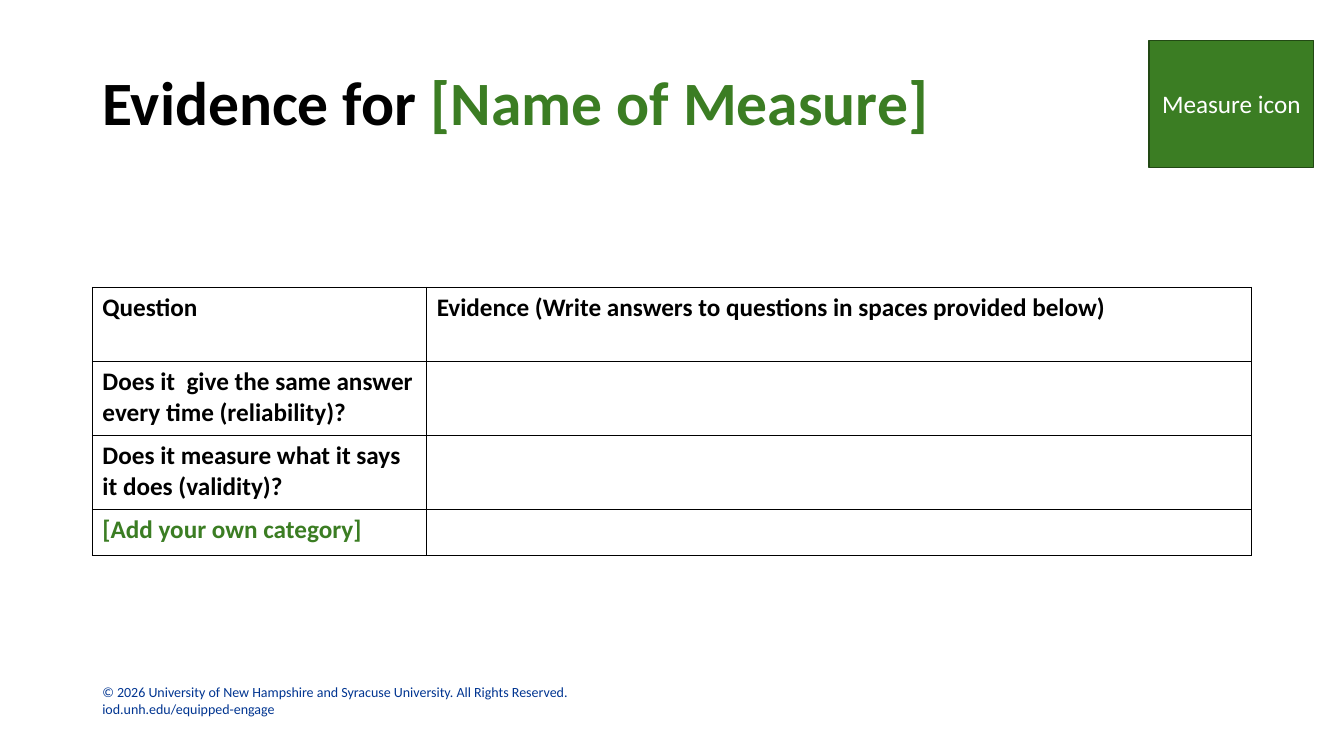
from dataclasses import dataclass

from lxml import etree
from pptx import Presentation
from pptx import util as u
from pptx.dml.color import RGBColor
from pptx.enum import shapes, text
from pptx.oxml import ns


@dataclass(frozen=True)
class Theme:
    font: str = "Calibri"
    ink: str = "000000"
    green: str = "3B7D23"
    green_edge: str = "224914"
    navy: str = "013591"
    white: str = "FFFFFF"
    title: float = 44
    body: float = 18
    small: float = 10


THEME = Theme()

TITLE = [("Evidence for ", THEME.ink), ("[Name of Measure]", THEME.green)]
ICON_LABEL = "Measure icon"
HEADINGS = ("Question", "Evidence (Write answers to questions in spaces provided below)")
QUESTIONS = [
    ("Does it  give the same answer every time (reliability)?", THEME.ink),
    ("Does it measure what it says it does (validity)?", THEME.ink),
    ("[Add your own category]", THEME.green),
]
COPYRIGHT = [
    "© 2026 University of New Hampshire and Syracuse University. All Rights Reserved. ",
    "iod.unh.edu/equipped-engage",
]

SLIDE_SIZE = (960, 540)
LEFT, WIDTH = 66, 828
TITLE_AREA = (LEFT, 30.2, WIDTH, 72.8)
ICON_AREA = (820.8, 28.8, 117.5, 90.7)
TABLE_TOP = 205.3
COLUMNS = (238.8, WIDTH - 238.8)
ROWS = (52.8, 52.8, 52.8, 33)
FOOTER_AREA = (LEFT, 484.6, 385.2, 31.5)


def points(values):
    return [u.Pt(value) for value in values]


def write(para, content, *, color=THEME.ink, size=THEME.body, bold=False):
    span = para.add_run()
    span.text = content
    span.font.name = THEME.font
    span.font.size = u.Pt(size)
    span.font.bold = bold
    span.font.color.rgb = RGBColor.from_string(color)


def add_title(page):
    title = page.shapes.title
    title.left, title.top, title.width, title.height = points(TITLE_AREA)
    frame = title.text_frame
    frame.word_wrap = True
    frame.auto_size = text.MSO_AUTO_SIZE.NONE
    frame.vertical_anchor = text.MSO_ANCHOR.BOTTOM
    para = frame.paragraphs[0]
    para.alignment = text.PP_ALIGN.LEFT
    para.line_spacing = 0.9
    para.space_before = u.Pt(0)
    for content, color in TITLE:
        write(para, content, color=color, size=THEME.title, bold=True)


def style_cell(cell):
    """Give a cell thin black borders on all sides and no fill."""
    properties = cell._tc.get_or_add_tcPr()
    for side in ("lnL", "lnR", "lnT", "lnB"):
        line = etree.SubElement(properties, ns.qn(f"a:{side}"), w=str(u.Pt(1)))
        fill = etree.SubElement(line, ns.qn("a:solidFill"))
        etree.SubElement(fill, ns.qn("a:srgbClr"), val=THEME.ink)
    cell.fill.background()


def add_evidence_table(page):
    area = points((LEFT, TABLE_TOP, sum(COLUMNS), sum(ROWS)))
    table = page.shapes.add_table(len(ROWS), len(COLUMNS), *area).table
    table.first_row = table.horz_banding = False
    for column, width in zip(table.columns, COLUMNS):
        column.width = u.Pt(width)
    for row, height in zip(table.rows, ROWS):
        row.height = u.Pt(height)
    for cell in table.iter_cells():
        style_cell(cell)
    for index, heading in enumerate(HEADINGS):
        write(table.cell(0, index).text_frame.paragraphs[0], heading, bold=True)
    for index, (question, color) in enumerate(QUESTIONS, start=1):
        para = table.cell(index, 0).text_frame.paragraphs[0]
        write(para, question, color=color, bold=True)


def add_icon_box(page):
    box = page.shapes.add_shape(shapes.MSO_SHAPE.RECTANGLE, *points(ICON_AREA))
    box.shadow.inherit = False
    box.fill.solid()
    box.fill.fore_color.rgb = RGBColor.from_string(THEME.green)
    box.line.color.rgb = RGBColor.from_string(THEME.green_edge)
    box.line.width = u.Pt(1)
    box.text_frame.word_wrap = True
    box.text_frame.vertical_anchor = text.MSO_ANCHOR.MIDDLE
    para = box.text_frame.paragraphs[0]
    para.alignment = text.PP_ALIGN.CENTER
    write(para, ICON_LABEL, color=THEME.white)


def add_footer(page):
    frame = page.shapes.add_textbox(*points(FOOTER_AREA)).text_frame
    frame.word_wrap = True
    para = frame.paragraphs[0]
    for index, line in enumerate(COPYRIGHT):
        if index:
            para.add_line_break()
        write(para, line, color=THEME.navy, size=THEME.small)


def main():
    deck = Presentation()
    deck.slide_width, deck.slide_height = points(SLIDE_SIZE)
    page = deck.slides.add_slide(deck.slide_layouts.get_by_name("Title Only"))
    add_footer(page)
    add_title(page)
    add_evidence_table(page)
    add_icon_box(page)
    deck.save("out.pptx")


if __name__ == "__main__":
    main()
